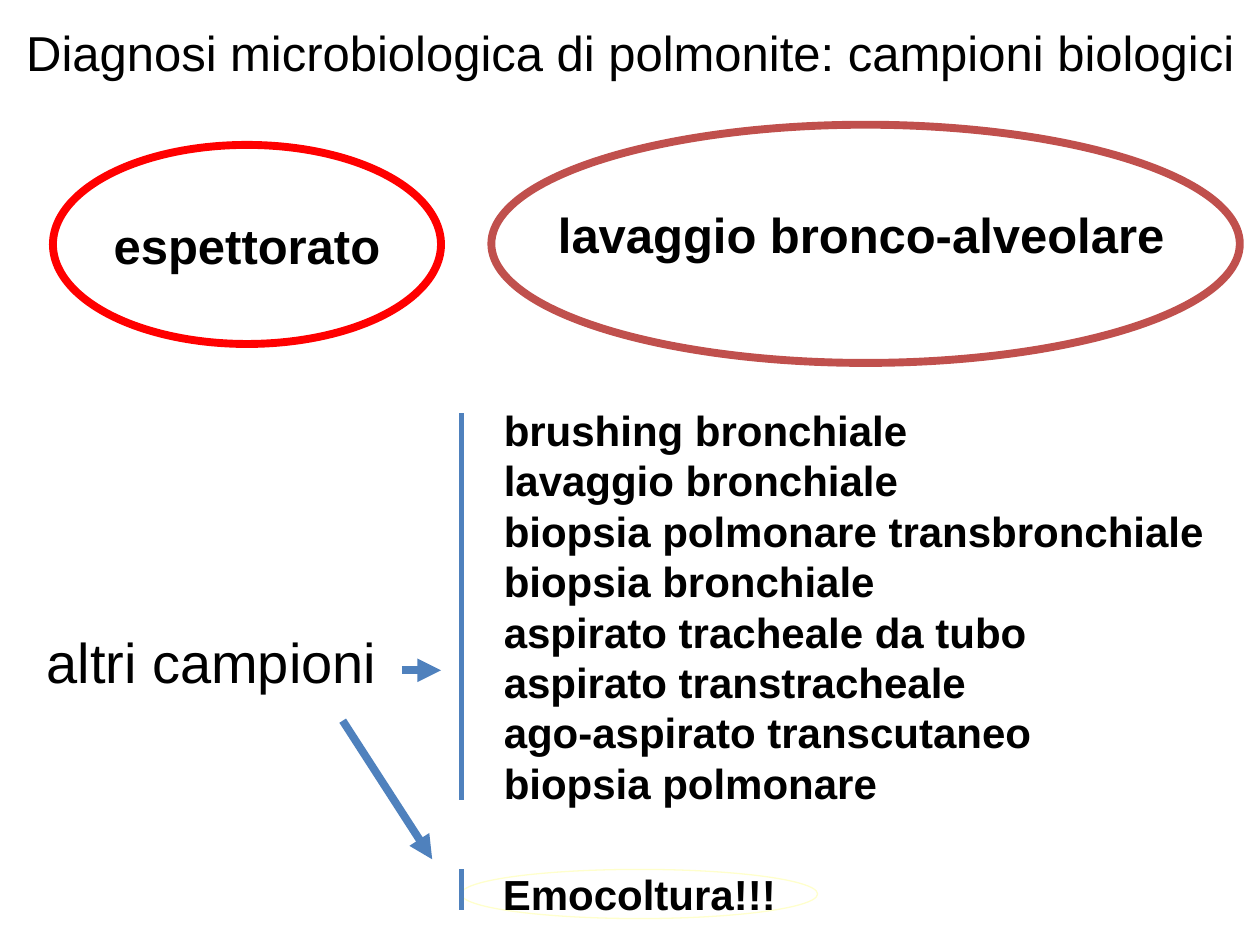
from pptx import Presentation
from pptx.util import Inches, Pt
from pptx.dml.color import RGBColor as Rgb
from pptx.enum.shapes import MSO_SHAPE as Shape, MSO_CONNECTOR as Link
from pptx.enum.text import PP_ALIGN as Align, MSO_ANCHOR as Anchor
from pptx.oxml.ns import qn
from lxml.etree import SubElement as Sub

THEME = dict(
    font="Arial", ink="000000", blue="4F81BD", red="FF0000", brick="C0504D",
    cream="FFFFCC", white="FFFFFF", list=24, head=28, label=32,
    hair=0.75, bar=3, bold=4.5)

TITLE = ["Diagnosi microbiologica di polmonite: campioni biologici"]
SAMPLES = [
    "brushing bronchiale", "lavaggio bronchiale",
    "biopsia polmonare transbronchiale", "biopsia bronchiale",
    "aspirato tracheale da tubo", "aspirato transtracheale",
    "ago-aspirato transcutaneo", "biopsia polmonare"]

OVAL, RECT = Shape.OVAL, Shape.RECTANGLE
OUTLINES = [
    (OVAL, (3.9, 0.99, 5.94, 1.89), "brick", "bold", [], {}),
    (RECT, (0, 0.13, 10, 0.58), "white", "hair", TITLE,
     dict(size="head", bold=False, wrap=True, anchor=Anchor.TOP)),
    (OVAL, (0.42, 1.15, 3.08, 1.58), "red", "bold", ["espettorato"],
     dict(size="head")),
    (OVAL, (3.66, 6.9, 2.83, 0.39), "cream", "hair", ["Emocoltura!!!"], {}),
    (RECT, (3.9, 3.04, 5.83, 3.54), "white", "hair", SAMPLES,
     dict(align=Align.LEFT)),
]
LABELS = [
    ((3.92, 1.55, 5.83, 0.62), ["lavaggio bronco-alveolare"],
     dict(size="head")),
    ((0, 4.93, 3.36, 0.63), ["altri campioni"],
     dict(size="label", bold=False, wrap=True, anchor=Anchor.TOP)),
]
LINES = [
    ((3.66, 3.28, 3.66, 6.35), "bar", False),
    ((3.66, 6.9, 3.66, 7.22), "bar", False),
    ((3.19, 5.32, 3.5, 5.32), "bold", True),
    ((2.72, 5.72, 3.43, 6.82), "bold", True),
]


def place(spot):
    return [Inches(n) for n in spot]


def tint(name):
    return Rgb.from_string(THEME[name])


def write(shape, rows, size="list", bold=True, wrap=False,
          align=Align.CENTER, anchor=Anchor.MIDDLE):
    frame = shape.text_frame
    frame.text = "\n".join(rows)
    frame.word_wrap = wrap
    frame.vertical_anchor = anchor
    for para in frame.paragraphs:
        para.alignment = align
        font = para.font
        font.name, font.size, font.bold = THEME["font"], Pt(THEME[size]), bold
        font.color.rgb = tint("ink")


def stroke(line, color, width):
    line.color.rgb = tint(color)
    line.width = Pt(THEME[width])


def outline(shapes, kind, spot, color, width, rows, style):
    shape = shapes.add_shape(kind, *place(spot))
    shape.shadow.inherit = False
    shape.fill.background()
    stroke(shape.line, color, width)
    if rows:
        write(shape, rows, **style)


def connect(shapes, ends, width, arrow):
    link = shapes.add_connector(Link.STRAIGHT, *place(ends))
    stroke(link.line, "blue", width)
    props = link._element.spPr
    if arrow:
        Sub(props.find(qn("a:ln")), qn("a:tailEnd"), type="triangle")
    Sub(props, qn("a:effectLst"))


def main():
    """Build the slide on samples for diagnosing pneumonia."""
    deck = Presentation()
    deck.slide_width, deck.slide_height = place((10, 7.5))
    shapes = deck.slides.add_slide(deck.slide_layouts[6]).shapes
    for item in OUTLINES:
        outline(shapes, *item)
    for spot, rows, style in LABELS:
        write(shapes.add_textbox(*place(spot)), rows, **style)
    for item in LINES:
        connect(shapes, *item)
    deck.save("out.pptx")


if __name__ == "__main__":
    main()
